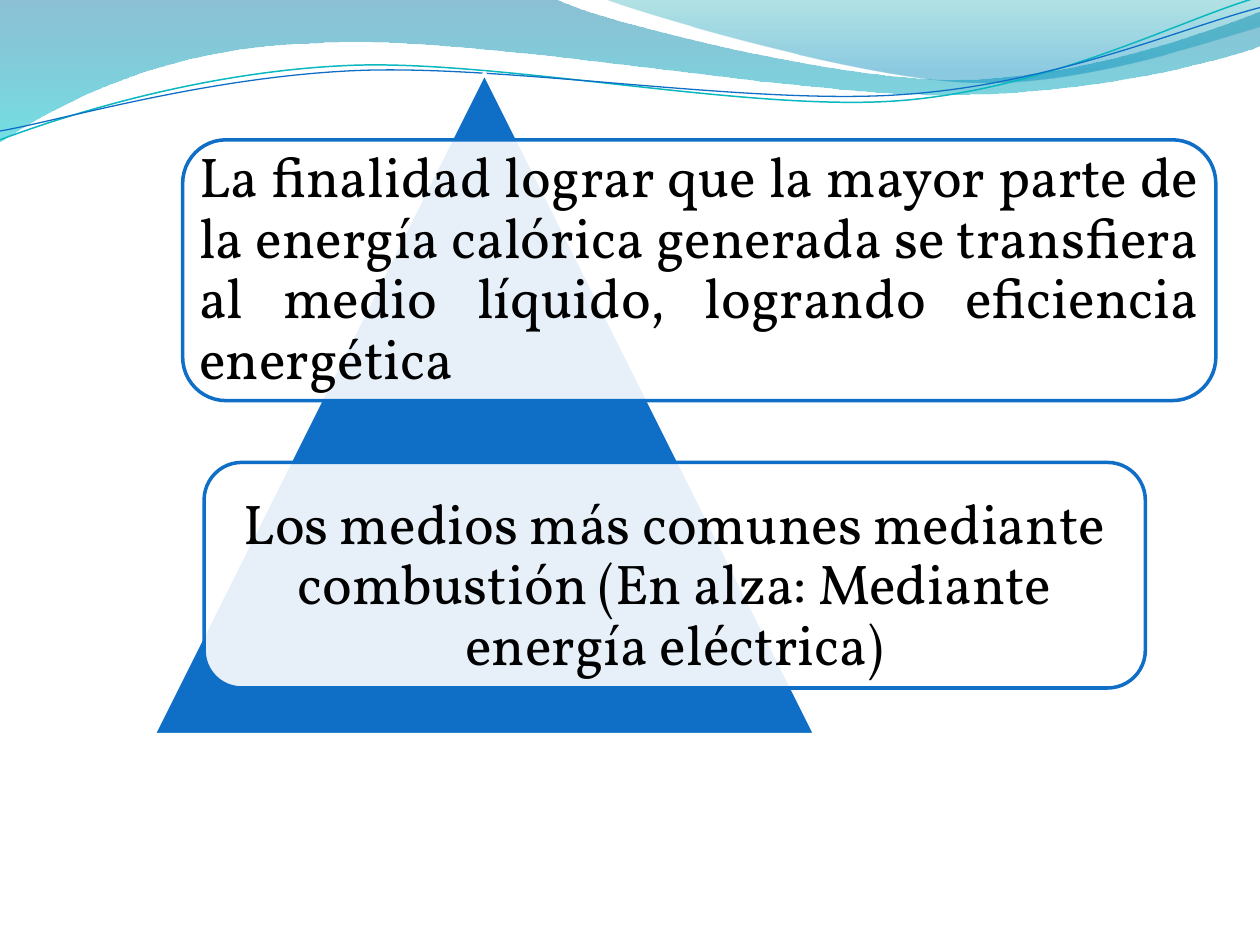
from math import cos, radians, sin

from lxml.etree import SubElement
from pptx import Presentation
from pptx.dml.color import RGBColor
from pptx.enum.shapes import MSO_SHAPE
from pptx.enum.text import MSO_ANCHOR, MSO_AUTO_SIZE, PP_ALIGN
from pptx.oxml.ns import qn
from pptx.util import Inches, Pt

WHITE = RGBColor(0xFF, 0xFF, 0xFF)
BLACK = RGBColor(0, 0, 0)
BLUE = RGBColor(0x0F, 0x6F, 0xC6)
TEAL = RGBColor(0x0A, 0xB8, 0xBF)
DEEP_BLUE = RGBColor(0, 0x74, 0xA1)
CYAN = RGBColor(0, 0xC6, 0xCF)
SEA_GREEN = RGBColor(0, 0xA1, 0xA9)
SKY_BLUE = RGBColor(0, 0x8B, 0xBF)
FONT = "Vollkorn"
SWOOSH_TILT = -2.7

# Box, then an outline of points (2 numbers) and Bézier curves (6), all in inches
WAVES = [
    ((-0.01, -0.01, 10.02, 1.14),
     [(0, 0), (4.4, -0.01), (4.76, 0.17, 6.64, 0.63, 7.58, 0.63),
      (8.53, 0.63, 9.58, 0.26, 10, 0.09), (10.01, 0.36),
      (9.83, 0.44, 8.7, 0.76, 7.46, 0.75), (6.22, 0.75, 3.82, 0.28, 2.57, 0.34),
      (1.29, 0.36, 0.46, 0.83, -0.01, 1.13)],
     [(0, DEEP_BLUE, 45), (1, CYAN, 55)]),
    ((4.79, -0.01, 5.21, 0.7),
     [(4.79, -0.01), (5.09, 0.11, 6.82, 0.62, 7.69, 0.65),
      (8.56, 0.69, 9.61, 0.32, 10, 0.21), (10, 0)],
     [(0, SEA_GREEN, 30), (0.8, SKY_BLUE, 45)]),
]
SWOOSHES = [
    ((-0.02, 0.22, 10.02, 0.71),
     [(0, 1.11), (0.48, 0.93, 1.58, 0.57, 2.77, 0.52),
      (3.95, 0.47, 5.93, 0.89, 7.13, 0.8), (8.33, 0.71, 9.38, 0.15, 9.98, -0.02)],
     TEAL, 0.85),
    ((-0.02, 0.3, 10.03, 0.58),
     [(0, 1.04), (0.47, 0.96, 1.64, 0.61, 2.83, 0.56),
      (4.03, 0.51, 5.97, 0.84, 7.17, 0.75), (8.36, 0.67, 9.41, 0.21, 10, 0.06)],
     BLUE, 0.75),
]

# Cards: box from the pyramid's corner, text, alignment, top and bottom margins
CARDS = [
    ((0.23, 0.53, 8.2, 2.07),
     "La finalidad lograr que la mayor parte de la energía calórica generada "
     "se transfiera al medio líquido, logrando eficiencia energética",
     PP_ALIGN.JUSTIFY, (0.13, 0.13)),
    ((0.4, 3.09, 7.47, 1.79),
     "Los medios más comunes mediante combustión (En alza: Mediante energía eléctrica)",
     PP_ALIGN.CENTER, (0.23, 0.05)),
]


def set_format(target, values):
    for name, value in values.items():
        setattr(target, name, value)


def set_alpha(color_element, percent):
    SubElement(color_element, qn("a:alpha"), val=str(percent * 1000))


def add_outline(shapes, box, outline, close, tilt=0):
    """Add a curved outline whose points are given as seen after the tilt."""
    left, top, width, height = box
    angle = radians(-tilt)

    def to_local(x, y):
        across, down = x - left - width / 2, y - top - height / 2
        return (Inches(across * cos(angle) - down * sin(angle) + width / 2),
                Inches(across * sin(angle) + down * cos(angle) + height / 2))

    builder = shapes.build_freeform(0, 0)
    builder.add_line_segments([(Inches(width), Inches(height))], close=False)
    shape = builder.convert_to_shape()
    names = ("left", "top", "width", "height")
    set_format(shape, dict(zip(names, map(Inches, box))))
    shape.rotation = tilt
    shape.shadow.inherit = False

    # Curves take the place of the straight diagonal
    path = shape._element.spPr.find(".//" + qn("a:path"))
    for child in list(path):
        path.remove(child)
    path.set("w", str(Inches(width)))
    path.set("h", str(Inches(height)))
    for index, segment in enumerate(outline):
        tag = "a:moveTo" if index == 0 else "a:lnTo" if len(segment) == 2 else "a:cubicBezTo"
        command = SubElement(path, qn(tag))
        for x, y in zip(segment[::2], segment[1::2]):
            local_x, local_y = to_local(x, y)
            SubElement(command, qn("a:pt"), x=str(local_x), y=str(local_y))
    if close:
        SubElement(path, qn("a:close"))
    return shape


def add_header(slide):
    # Translucent gradient waves
    for box, outline, stops in WAVES:
        wave = add_outline(slide.shapes, box, outline, True)
        wave.line.fill.background()
        wave.fill.gradient()
        wave.fill.gradient_angle = 270
        for stop, (position, color, alpha) in zip(wave.fill.gradient_stops, stops):
            stop.position = position
            stop.color.rgb = color
        colors = wave._element.spPr.findall(".//" + qn("a:srgbClr"))
        for color_element, (_, _, alpha) in zip(colors, stops):
            set_alpha(color_element, alpha)
    # Thin lines below them
    group = slide.shapes.add_group_shape()
    for box, outline, color, width in SWOOSHES:
        swoosh = add_outline(group.shapes, box, outline, False, SWOOSH_TILT)
        swoosh.fill.background()
        swoosh.line.color.rgb = color
        swoosh.line.width = Pt(width)


def add_filled(shapes, kind, box, fill, line):
    shape = shapes.add_shape(kind, *map(Inches, box))
    shape.shadow.inherit = False
    shape.fill.solid()
    shape.fill.fore_color.rgb = fill
    shape.line.color.rgb = line
    shape.line.width = Pt(2)
    return shape


def add_card(shapes, box, text, alignment, margins):
    card = add_filled(shapes, MSO_SHAPE.ROUNDED_RECTANGLE, box, WHITE, BLUE)
    set_alpha(card._element.spPr.find(qn("a:solidFill"))[0], 90)
    frame = shapes.add_textbox(*map(Inches, box)).text_frame
    margin_top, margin_bottom = margins
    set_format(frame, {
        "word_wrap": True, "auto_size": MSO_AUTO_SIZE.NONE,
        "vertical_anchor": MSO_ANCHOR.MIDDLE,
        "margin_left": Inches(0.13), "margin_right": Inches(0.13),
        "margin_top": Inches(margin_top), "margin_bottom": Inches(margin_bottom)})
    paragraph = frame.paragraphs[0]
    set_format(paragraph, {"alignment": alignment, "line_spacing": 0.9})
    run = paragraph.add_run()
    run.text = text
    set_format(run.font, {"name": FONT, "size": Pt(32)})
    run.font.color.rgb = BLACK


def add_pyramid(slide, left, top, side):
    shapes = slide.shapes.add_group_shape().shapes
    add_filled(shapes, MSO_SHAPE.ISOSCELES_TRIANGLE, (left, top, side, side), BLUE, WHITE)
    for (x, y, width, height), text, alignment, margins in CARDS:
        add_card(shapes, (left + x, top + y, width, height), text, alignment, margins)


def main():
    presentation = Presentation()
    set_format(presentation, {"slide_width": Inches(10), "slide_height": Inches(7.5)})
    slide = presentation.slides.add_slide(presentation.slide_layouts[6])
    slide.background.fill.solid()
    slide.background.fill.fore_color.rgb = WHITE
    add_header(slide)
    add_pyramid(slide, 1.22, 0.58, 5.25)
    presentation.save("out.pptx")


if __name__ == "__main__":
    main()
